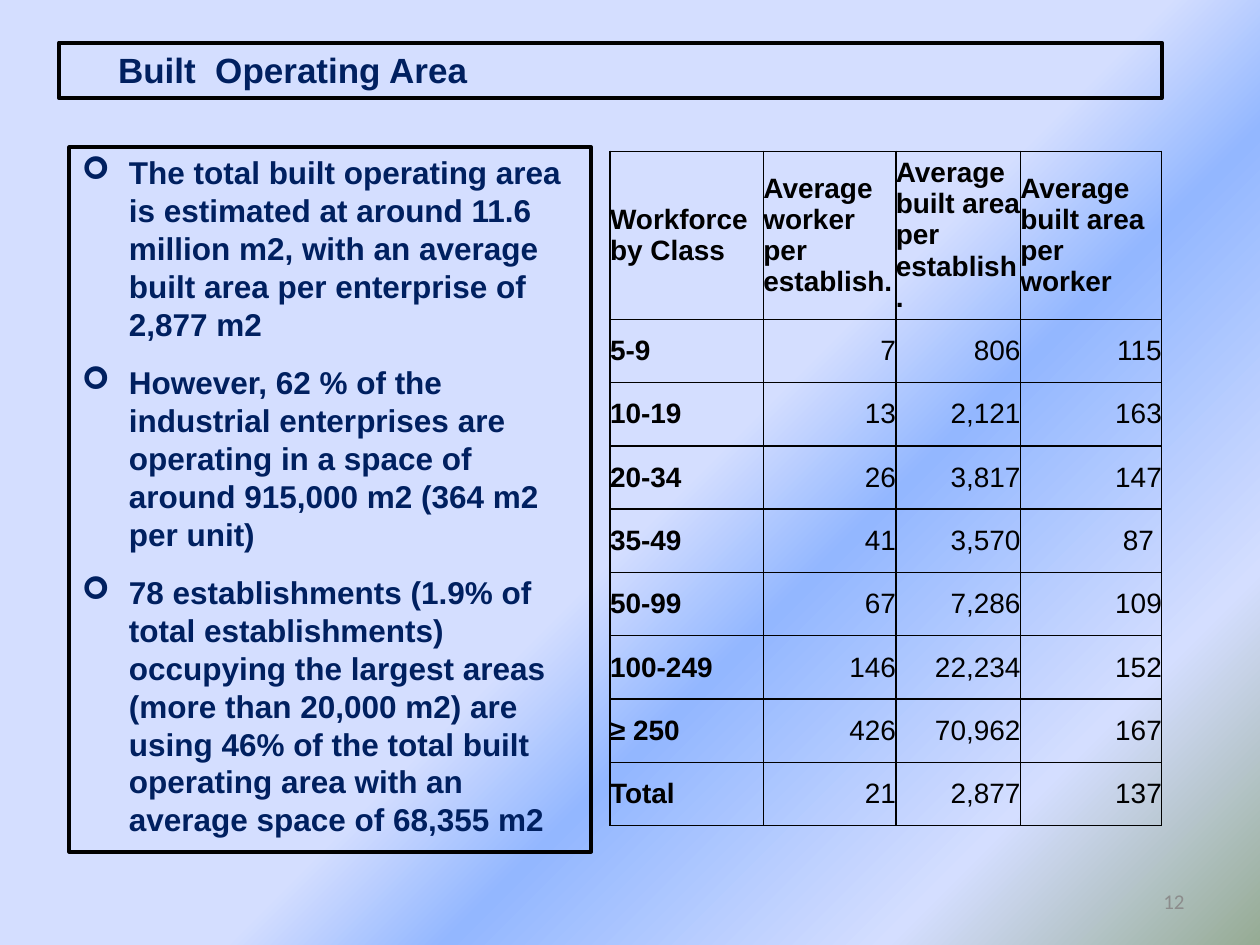
from dataclasses import dataclass

from lxml.etree import SubElement
from pptx import Presentation
from pptx.dml.color import RGBColor
from pptx.enum.shapes import MSO_SHAPE as Preset
from pptx.enum.text import MSO_ANCHOR as Anchor, MSO_AUTO_SIZE as AutoSize, PP_ALIGN as Align
from pptx.oxml import parse_xml
from pptx.oxml.ns import nsdecls, qn
from pptx.util import Cm, Pt

NAVY = RGBColor(0x00, 0x20, 0x60)
BLACK = RGBColor(0x00, 0x00, 0x00)
GRAY = RGBColor(0x8C, 0x8C, 0x8C)
PALE_BLUE = RGBColor(0xD4, 0xDE, 0xFF)
SKY_BLUE = RGBColor(0x93, 0xB7, 0xFF)
SAGE = RGBColor(0x96, 0xAB, 0x94)
BACKGROUND_STOPS = ((53, PALE_BLUE), (63, SKY_BLUE), (83, PALE_BLUE), (100, SAGE))


@dataclass
class TextStyle:
    size: int
    color: RGBColor
    bold: bool = False
    font: str = "Arial"


@dataclass
class Panel:
    left: float
    top: float
    width: float
    height: float
    paragraphs: tuple[str, ...]
    style: TextStyle
    margin: float
    indent: float
    space_after: int = 0
    bullet: str = ""


TITLE = Panel(1.19, 0.86, 22.23, 1.12, ("Built  Operating Area",),
              TextStyle(20, NAVY, True), 1.93, -0.99)
FINDINGS = Panel(
    1.4, 2.97, 10.52, 14.2,
    (
        "The total built operating area is estimated at around 11.6 million m2, "
        "with an average built area per enterprise of 2,877 m2",
        "However, 62 % of the industrial enterprises are operating in a space of "
        "around 915,000 m2 (364 m2 per unit)",
        "78 establishments (1.9% of total establishments) occupying the largest areas "
        "(more than 20,000 m2) are using 46% of the total built operating area "
        "with an average space of 68,355 m2",
    ),
    TextStyle(18, NAVY, True), 0.95, -0.95, 12, "➢",
)
COLUMN_WIDTHS = (3.09, 2.67, 2.51, 2.85)
HEADER_HEIGHT, ROW_HEIGHT = 1.98, 1.277
TABLE_ROWS = (
    ("Workforce by Class", "Average worker per establish.",
     "Average built area per establish.", "Average built area per worker"),
    ("5-9", "7", "806", "115"),
    ("10-19", "13", "2,121", "163"),
    ("20-34", "26", "3,817", "147"),
    ("35-49", "41", "3,570", "87 "),
    ("50-99", "67", "7,286", "109"),
    ("100-249", "146", "22,234", "152"),
    ("≥ 250", "426", "70,962", "167"),
    ("Total", "21", "2,877", "137"),
)


def add_run(paragraph, text: str, style: TextStyle) -> None:
    run = paragraph.add_run()
    run.text = text
    run.font.name = style.font
    run.font.size = Pt(style.size)
    run.font.bold = style.bold
    run.font.color.rgb = style.color


def set_background(slide) -> None:
    fill = slide.background.fill
    fill.gradient()
    gradient = slide.background._cSld.find(".//" + qn("a:gradFill"))
    stops = "".join(
        f'<a:gs pos="{position * 1000}"><a:srgbClr val="{color}"/></a:gs>'
        for position, color in BACKGROUND_STOPS
    )
    gradient.getparent().replace(gradient, parse_xml(
        f'<a:gradFill {nsdecls("a")} rotWithShape="1"><a:gsLst>{stops}</a:gsLst>'
        '<a:lin ang="2700000" scaled="0"/></a:gradFill>'
    ))


def add_panel(slide, panel: Panel) -> None:
    shape = slide.shapes.add_shape(
        Preset.RECTANGLE, Cm(panel.left), Cm(panel.top), Cm(panel.width), Cm(panel.height))
    shape.shadow.inherit = False
    shape.fill.background()
    shape.line.color.rgb = BLACK
    shape.line.width = Pt(2.25)
    frame = shape.text_frame
    frame.word_wrap = True
    frame.auto_size = AutoSize.SHAPE_TO_FIT_TEXT
    frame.vertical_anchor = Anchor.TOP
    for index, text in enumerate(panel.paragraphs):
        paragraph = frame.add_paragraph() if index else frame.paragraphs[0]
        paragraph.alignment = Align.LEFT
        paragraph.space_after = Pt(panel.space_after)
        properties = paragraph._p.get_or_add_pPr()
        properties.set("marL", str(Cm(panel.margin)))
        properties.set("indent", str(Cm(panel.indent)))
        if panel.bullet:
            SubElement(properties, qn("a:buFont"), typeface="Wingdings")
            SubElement(properties, qn("a:buChar"), char=panel.bullet)
        add_run(paragraph, text, panel.style)


def set_borders(cell) -> None:
    properties = cell._tc.get_or_add_tcPr()
    for index, side in enumerate(("lnL", "lnR", "lnT", "lnB")):
        properties.insert(index, parse_xml(
            f'<a:{side} {nsdecls("a")} w="{Pt(1)}"><a:solidFill>'
            f'<a:srgbClr val="{BLACK}"/></a:solidFill></a:{side}>'
        ))


def add_area_table(slide) -> None:
    height = HEADER_HEIGHT + ROW_HEIGHT * (len(TABLE_ROWS) - 1)
    table = slide.shapes.add_table(
        len(TABLE_ROWS), len(COLUMN_WIDTHS), Cm(12.3), Cm(3.05),
        Cm(sum(COLUMN_WIDTHS)), Cm(height)).table
    table.first_row = table.horz_banding = False
    for column, width in zip(table.columns, COLUMN_WIDTHS):
        column.width = Cm(width)
    for row_index, (row, values) in enumerate(zip(table.rows, TABLE_ROWS)):
        row.height = Cm(ROW_HEIGHT if row_index else HEADER_HEIGHT)
        for column_index, (cell, value) in enumerate(zip(row.cells, values)):
            is_label = row_index == 0 or column_index == 0
            cell.fill.background()
            cell.margin_left = cell.margin_right = cell.margin_top = cell.margin_bottom = 0
            cell.vertical_anchor = Anchor.MIDDLE
            set_borders(cell)
            paragraph = cell.text_frame.paragraphs[0]
            paragraph.alignment = Align.LEFT if is_label else Align.RIGHT
            add_run(paragraph, value, TextStyle(16, BLACK, is_label))


def add_page_number(slide) -> None:
    frame = slide.shapes.add_textbox(Cm(18.21), Cm(17.65), Cm(5.92), Cm(1.02)).text_frame
    frame.word_wrap = True
    frame.vertical_anchor = Anchor.MIDDLE
    paragraph = frame.paragraphs[0]
    paragraph.alignment = Align.RIGHT
    add_run(paragraph, "12", TextStyle(12, GRAY, font="Calibri"))


def main() -> None:
    presentation = Presentation()
    presentation.slide_width, presentation.slide_height = Cm(25.4), Cm(19.05)
    slide = presentation.slides.add_slide(presentation.slide_layouts[6])
    set_background(slide)
    add_page_number(slide)
    for panel in (TITLE, FINDINGS):
        add_panel(slide, panel)
    add_area_table(slide)
    presentation.save("out.pptx")


if __name__ == "__main__":
    main()
